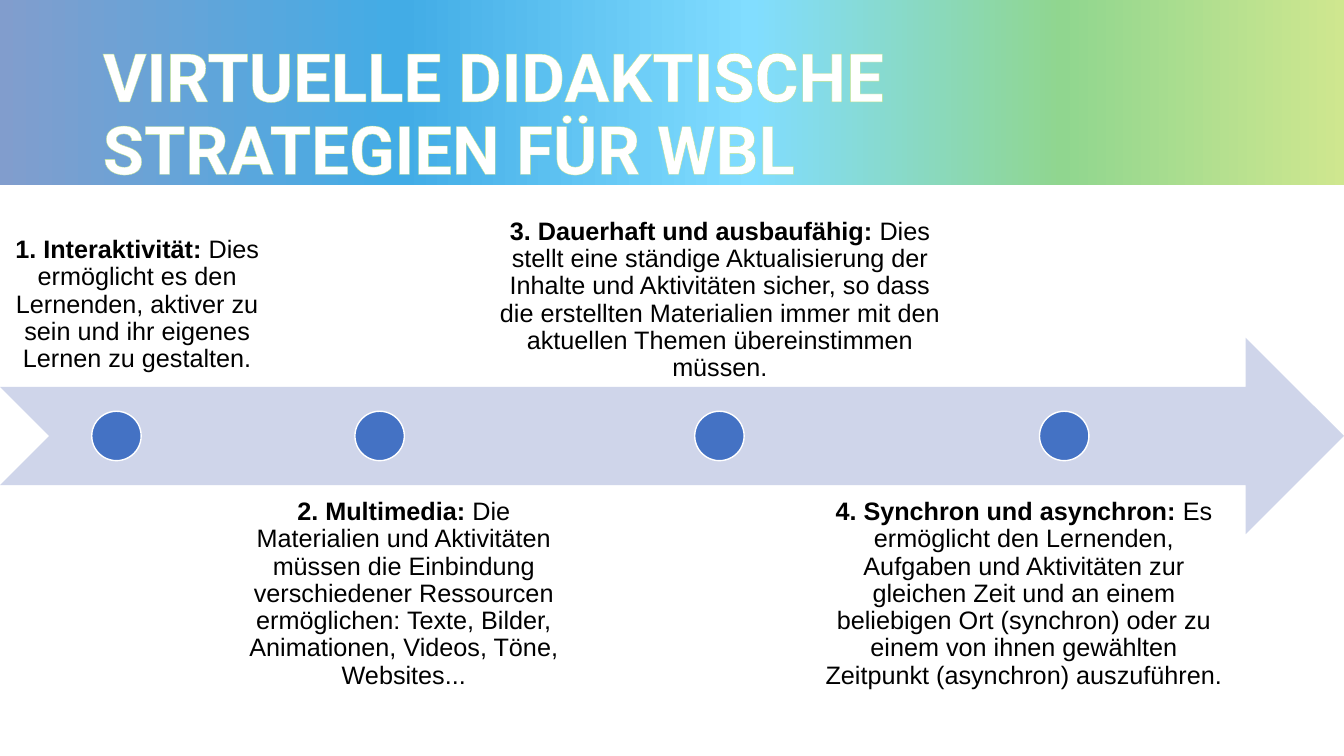
from lxml import etree
from pptx import Presentation
from pptx.dml.color import RGBColor
from pptx.enum.shapes import MSO_SHAPE
from pptx.enum.text import MSO_ANCHOR, PP_ALIGN
from pptx.oxml import parse_xml
from pptx.oxml.ns import qn
from pptx.util import Inches, Pt

RECTANGLE = MSO_SHAPE.RECTANGLE
NOTCHED_ARROW = MSO_SHAPE.NOTCHED_RIGHT_ARROW
OVAL = MSO_SHAPE.OVAL
TOP, MIDDLE, BOTTOM = MSO_ANCHOR.TOP, MSO_ANCHOR.MIDDLE, MSO_ANCHOR.BOTTOM
LEFT, CENTER = PP_ALIGN.LEFT, PP_ALIGN.CENTER

WHITE = RGBColor(0xFF, 0xFF, 0xFF)
BLACK = RGBColor(0x00, 0x00, 0x00)
ARROW_LAVENDER = RGBColor(0xCF, 0xD5, 0xEA)
DOT_BLUE = RGBColor(0x44, 0x72, 0xC4)
TITLE_OUTLINE = RGBColor(0xBF, 0xE3, 0x8F)
BAND_STOPS = [
    (0, RGBColor(0x81, 0x9D, 0xCD)),
    (30, RGBColor(0x42, 0xAC, 0xE6)),
    (56, RGBColor(0x81, 0xDD, 0xFF)),
    (79, RGBColor(0x90, 0xD6, 0x8F)),
    (100, RGBColor(0xCF, 0xE7, 0x8F)),
]

SLIDE_WIDTH = 13.33
DRAWING_NS = "http://schemas.openxmlformats.org/drawingml/2006/main"
STEP_HEIGHT = 1.95
DOT_SIZE = 0.49
DOT_TOP = 4.08

# heading, explanation, left, top, width, anchor, left of the dot
STEPS = [
    ("1. Interaktivität: ",
     "Dies ermöglicht es den Lernenden, aktiver zu sein und ihr eigenes "
     "Lernen zu gestalten.",
     0, 1.89, 2.72, BOTTOM, 0.91),
    ("2. Multimedia: ",
     "Die Materialien und Aktivitäten müssen die Einbindung verschiedener "
     "Ressourcen ermöglichen: Texte, Bilder, Animationen, Videos, Töne, "
     "Websites...",
     2.19, 4.81, 3.63, TOP, 3.52),
    ("3. Dauerhaft und ausbaufähig: ",
     "Dies stellt eine ständige Aktualisierung der Inhalte und Aktivitäten "
     "sicher, so dass die erstellten Materialien immer mit den aktuellen "
     "Themen übereinstimmen müssen.",
     4.75, 1.98, 4.78, BOTTOM, 6.89),
    ("4. Synchron und asynchron: ",
     "Es ermöglicht den Lernenden, Aufgaben und Aktivitäten zur gleichen "
     "Zeit und an einem beliebigen Ort (synchron) oder zu einem von ihnen "
     "gewählten Zeitpunkt (asynchron) auszuführen.",
     8.01, 4.81, 4.29, TOP, 10.31),
]


def add_preset(slide, preset, left, top, width, height, fill=None, line=None):
    shape = slide.shapes.add_shape(
        preset, Inches(left), Inches(top), Inches(width), Inches(height))
    shape.shadow.inherit = False
    if fill is not None:
        shape.fill.solid()
        shape.fill.fore_color.rgb = fill
    if line is None:
        shape.line.fill.background()
    else:
        shape.line.color.rgb = line
        shape.line.width = Pt(1)
    return shape


def apply_gradient(shape, stops):
    """Fill the shape from left to right with (percent, colour) stops."""
    shape.fill.gradient()
    shape.fill.gradient_angle = 0
    stop_list = shape.fill.gradient_stops[0]._gs.getparent()
    for old_stop in list(stop_list):
        stop_list.remove(old_stop)
    for percent, color in stops:
        stop = etree.SubElement(stop_list, qn("a:gs"), pos=str(percent * 1000))
        etree.SubElement(stop, qn("a:srgbClr"), val=str(color))


def outline_text(run, color, width):
    run.font._element.insert(0, parse_xml(
        f'<a:ln xmlns:a="{DRAWING_NS}" w="{Pt(width)}"><a:solidFill>'
        f'<a:srgbClr val="{color}"/></a:solidFill></a:ln>'))


def add_text(slide, parts, left, top, width, height, *, font, size, color,
             anchor=TOP, align=LEFT, inset_x=0.1, inset_y=0.05):
    """Add one paragraph made of (text, bold) parts and return its runs."""
    box = slide.shapes.add_textbox(
        Inches(left), Inches(top), Inches(width), Inches(height))
    frame = box.text_frame
    frame.word_wrap = True
    frame.vertical_anchor = anchor
    frame.margin_left = frame.margin_right = Inches(inset_x)
    frame.margin_top = frame.margin_bottom = Inches(inset_y)
    paragraph = frame.paragraphs[0]
    paragraph.alignment = align
    paragraph.line_spacing = 0.9
    for text, bold in parts:
        run = paragraph.add_run()
        run.text = text
        run.font.name = font
        run.font.size = Pt(size)
        run.font.bold = bold
        run.font.color.rgb = color
    return paragraph.runs


def add_header(slide):
    band = add_preset(slide, RECTANGLE, 0, -0.08, SLIDE_WIDTH, 1.92)
    apply_gradient(band, BAND_STOPS)
    title_runs = add_text(
        slide, [("VIRTUELLE DIDAKTISCHE STRATEGIEN FÜR WBL", True)],
        0.92, 0.32, 11.5, 1.67,
        font="Roboto", size=48, color=WHITE, anchor=MIDDLE)
    outline_text(title_runs[0], TITLE_OUTLINE, 0.75)


def add_step(slide, heading, explanation, left, top, width, anchor, dot_left):
    add_text(slide, [(heading, True), (explanation, False)],
             left, top, width, STEP_HEIGHT,
             font="Arial", size=18, color=BLACK, anchor=anchor, align=CENTER,
             inset_x=0.14, inset_y=0.14)
    add_preset(slide, OVAL, dot_left, DOT_TOP, DOT_SIZE, DOT_SIZE,
               fill=DOT_BLUE, line=WHITE)


def main():
    presentation = Presentation()
    presentation.slide_width = Inches(SLIDE_WIDTH)
    presentation.slide_height = Inches(7.5)
    slide = presentation.slides.add_slide(presentation.slide_layouts[6])
    add_header(slide)
    add_preset(slide, NOTCHED_ARROW, 0, 3.35, SLIDE_WIDTH, STEP_HEIGHT,
               fill=ARROW_LAVENDER)
    for step in STEPS:
        add_step(slide, *step)
    presentation.save("out.pptx")


if __name__ == "__main__":
    main()
